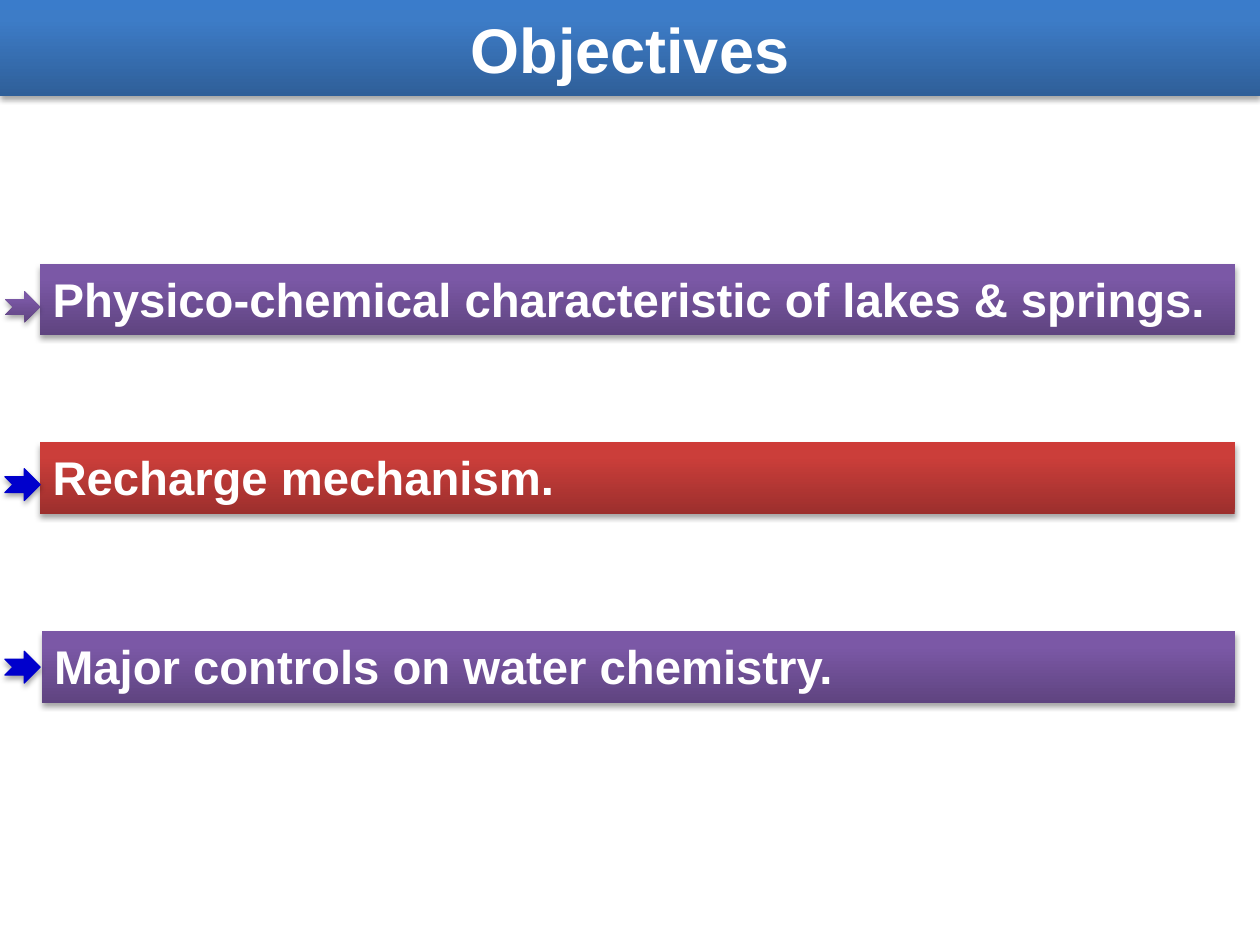
import copy

import lxml.etree
import pptx
import pptx.dml.color
import pptx.enum.shapes
import pptx.enum.text
import pptx.oxml.ns
import pptx.util

Cm = pptx.util.Cm
Shapes = pptx.enum.shapes.MSO_SHAPE
Align = pptx.enum.text.PP_ALIGN
Anchor = pptx.enum.text.MSO_ANCHOR
AutoSize = pptx.enum.text.MSO_AUTO_SIZE
qn = pptx.oxml.ns.qn

COLORS = {"text": "FFFFFF", "arrow": "0000CC", "shadow": "000000"}
# Dark at the bottom edge, lighter from 80 % upwards
GRADIENTS = {
    "blue": ("2F5F99", "3D7CC7", "3A7CCB"),
    "purple": ("5F4480", "7B58A6", "7C57A8"),
    "red": ("9C2F2D", "CB3E3A", "CE3B37"),
}
STOPS = (0, 0.8, 1)
RIGHT_EDGE = 24.89


def rgb(value):
    return pptx.dml.color.RGBColor.from_string(value)


def apply(target, values):
    for name, value in values.items():
        setattr(target, name, value)


class ObjectivesSlide:
    font = {"name": "Arial", "bold": True}

    def __init__(self, slide):
        self.slide = slide

    def gradient(self, shape, name):
        shape.fill.gradient()
        shape.fill.gradient_angle = 90
        stops = shape._element.spPr.find(".//" + qn("a:gsLst"))
        stops.append(copy.deepcopy(stops[0]))
        for stop, position, color in zip(shape.fill.gradient_stops, STOPS, GRADIENTS[name]):
            stop.position = position
            stop.color.rgb = rgb(color)
        shape.line.fill.background()

    def drop_shadow(self, shape):
        shape.shadow.inherit = False
        effects = shape._element.spPr.find(qn("a:effectLst"))
        outer = lxml.etree.SubElement(
            effects, qn("a:outerShdw"), blurRad="39370", dist="22860",
            dir="5400000", rotWithShape="0")
        color = lxml.etree.SubElement(outer, qn("a:srgbClr"), val=COLORS["shadow"])
        lxml.etree.SubElement(color, qn("a:alpha"), val="35000")

    def label(self, shape, text, size, align, frame_format):
        frame = shape.text_frame
        frame.text = text
        apply(frame, {"word_wrap": True, **frame_format})
        paragraph = frame.paragraphs[0]
        paragraph.alignment = align
        font = paragraph.runs[0].font
        apply(font, {**self.font, "size": pptx.util.Pt(size)})
        font.color.rgb = rgb(COLORS["text"])

    def title(self, text):
        banner = self.slide.shapes.title
        apply(banner, {"left": 0, "top": 0, "width": Cm(25.4), "height": Cm(1.93)})
        self.gradient(banner, "blue")
        self.drop_shadow(banner)
        self.label(banner, text, 36, Align.CENTER,
                   {"vertical_anchor": Anchor.MIDDLE, "auto_size": AutoSize.NONE})

    def bar(self, text, left, top, height, gradient):
        bar = self.slide.shapes.add_shape(
            Shapes.RECTANGLE, Cm(left), Cm(top), Cm(RIGHT_EDGE - left), Cm(height))
        self.gradient(bar, gradient)
        self.drop_shadow(bar)
        self.label(bar, text, 27, Align.LEFT,
                   {"vertical_anchor": Anchor.TOP, "auto_size": AutoSize.SHAPE_TO_FIT_TEXT})

    def arrow(self, top, gradient=None):
        arrow = self.slide.shapes.add_shape(
            Shapes.NOTCHED_RIGHT_ARROW, Cm(0.1), Cm(top), Cm(0.71), Cm(0.64))
        if gradient:
            self.gradient(arrow, gradient)
        else:
            arrow.fill.solid()
            arrow.fill.fore_color.rgb = rgb(COLORS["arrow"])
            arrow.line.color.rgb = rgb(COLORS["arrow"])
            arrow.line.width = pptx.util.Pt(0.75)
        self.drop_shadow(arrow)


# text, bar left, bar top, bar height, bar gradient, arrow top, arrow gradient
OBJECTIVES = [
    ("Major controls on water chemistry.", 0.84, 12.73, 1.45, "purple", 13.13, None),
    ("Recharge mechanism.", 0.81, 8.92, 1.45, "red", 9.45, None),
    ("Physico-chemical characteristic of lakes & springs.",
     0.81, 5.33, 1.42, "purple", 5.87, "purple"),
]


def main():
    deck = pptx.Presentation()
    apply(deck, {"slide_width": Cm(25.4), "slide_height": Cm(19.05)})
    page = ObjectivesSlide(deck.slides.add_slide(deck.slide_layouts[5]))
    page.title("Objectives")
    for text, left, top, height, gradient, arrow_top, arrow_gradient in OBJECTIVES:
        page.bar(text, left, top, height, gradient)
        page.arrow(arrow_top, arrow_gradient)
    deck.save("out.pptx")


if __name__ == "__main__":
    main()
